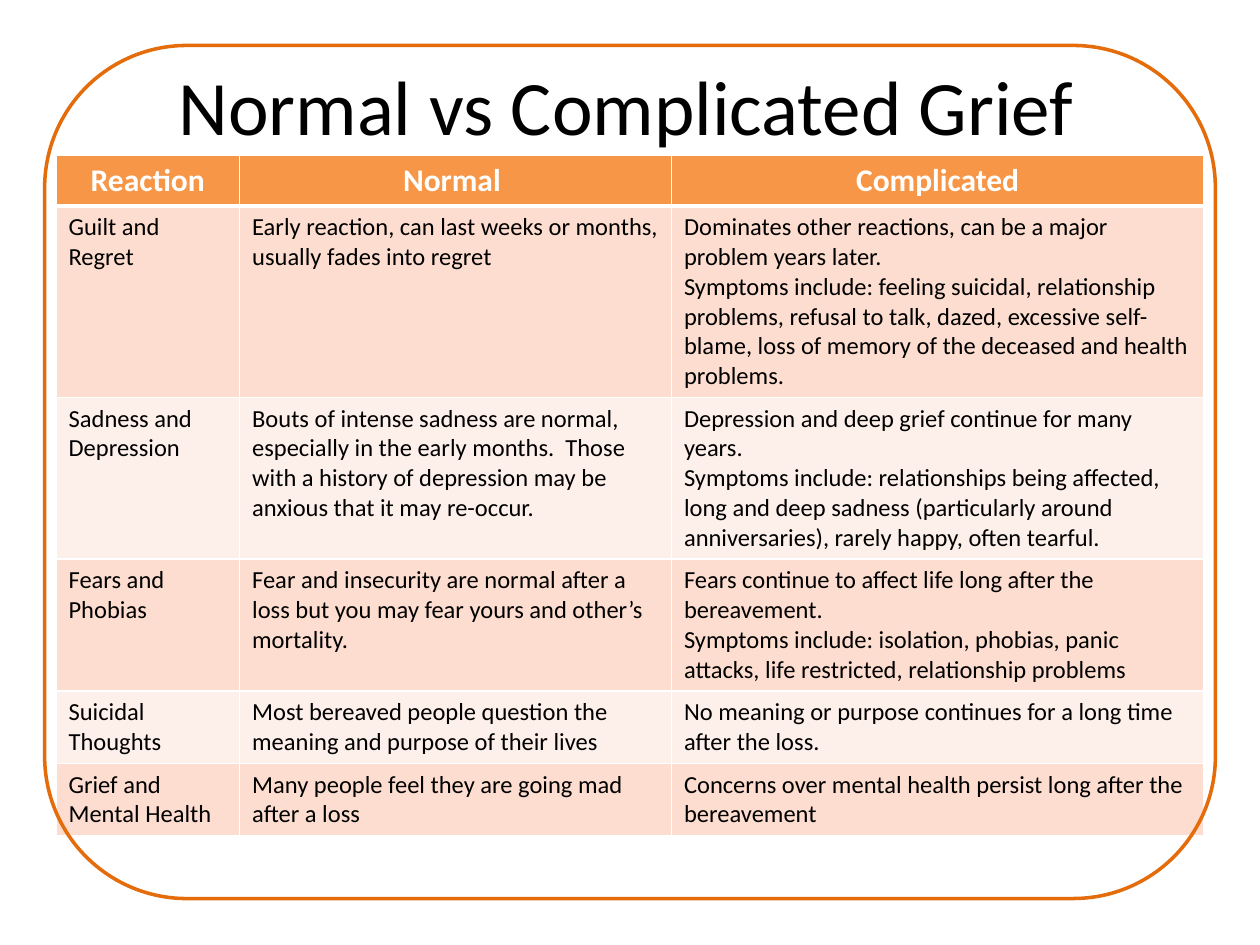
from lxml import etree
from pptx import Presentation
from pptx import util as u
from pptx.dml.color import RGBColor
from pptx.enum import shapes, text
from pptx.oxml import ns

FONT = "Calibri"
ORANGE, DARK, WHITE, BLACK = "F79646", "E46C0A", "FFFFFF", "000000"
BANDS = ["FCDDCF", "FDEFE9"]
HEADS = ["Reaction", "Normal ", "Complicated"]
ROWS = [
    ["Guilt and Regret",
     "Early reaction, can last weeks or months, usually fades into regret",
     "Dominates other reactions, can be a major problem years later.\n"
     "Symptoms include: feeling suicidal, relationship problems, refusal to talk, "
     "dazed, excessive self-blame, loss of memory of the deceased and health problems."],
    ["Sadness and Depression",
     "Bouts of intense sadness are normal, especially in the early months.  Those "
     "with a history of depression may be anxious that it may re-occur.",
     "Depression and deep grief continue for many years.\n"
     "Symptoms include: relationships being affected, long and deep sadness "
     "(particularly around anniversaries), rarely happy, often tearful."],
    ["Fears and Phobias",
     "Fear and insecurity are normal after a loss but you may fear yours and "
     "other’s mortality.",
     "Fears continue to affect life long after the bereavement.\n"
     "Symptoms include: isolation, phobias, panic attacks, life restricted, "
     "relationship problems"],
    ["Suicidal Thoughts",
     "Most bereaved people question the meaning and purpose of their lives",
     "No meaning or purpose continues for a long time after the loss."],
    ["Grief and Mental Health",
     "Many people feel they are going mad after a loss",
     "Concerns over mental health persist long after the bereavement"],
]


def color(code):
    return RGBColor.from_string(code)


def write(frame, words, size=14, ink=BLACK, bold=False, align=text.PP_ALIGN.LEFT):
    for i, line in enumerate(words.split("\n")):
        para = frame.add_paragraph() if i else frame.paragraphs[0]
        para.alignment = align
        run = para.add_run()
        run.text = line
        font = run.font
        font.name, font.size, font.bold = FONT, u.Pt(size), bold
        font.color.rgb = color(ink)


def edge(cell, side, width, ink=WHITE):
    line = etree.SubElement(cell._tc.get_or_add_tcPr(), ns.qn("a:ln" + side),
                            w=str(u.Pt(width)))
    fill = etree.SubElement(line, ns.qn("a:solidFill"))
    etree.SubElement(fill, ns.qn("a:srgbClr"), val=ink)


class Deck:
    def __init__(self):
        self.prs = Presentation()
        self.prs.slide_width, self.prs.slide_height = u.Pt(720), u.Pt(540)
        self.slide = self.prs.slides.add_slide(self.prs.slide_layouts[5])

    def title(self, words, *box):
        shape = self.slide.shapes.title
        shape.left, shape.top, shape.width, shape.height = map(u.Pt, box)
        shape.text_frame.vertical_anchor = text.MSO_ANCHOR.MIDDLE
        write(shape.text_frame, words, size=44, align=text.PP_ALIGN.CENTER)

    def table(self, heads, rows, left, top, widths, height):
        count = len(rows) + 1
        table = self.slide.shapes.add_table(
            count, len(widths), u.Pt(left), u.Pt(top),
            u.Pt(sum(widths)), u.Pt(height * count)).table
        for col, width in zip(table.columns, widths):
            col.width = u.Pt(width)
        for r, row in enumerate([heads] + rows):
            for c, words in enumerate(row):
                cell = table.cell(r, c)
                for side in "LRTB":
                    thick = (r, side) in [(0, "B"), (1, "T")]
                    edge(cell, side, 3 if thick else 1)
                cell.fill.solid()
                cell.fill.fore_color.rgb = color(BANDS[(r - 1) % 2] if r else ORANGE)
                if r:
                    write(cell.text_frame, words)
                else:
                    write(cell.text_frame, words, size=18, ink=WHITE, bold=True,
                          align=text.PP_ALIGN.CENTER)

    def frame(self, *box):
        shape = self.slide.shapes.add_shape(
            shapes.MSO_SHAPE.ROUNDED_RECTANGLE, *map(u.Pt, box))
        shape.shadow.inherit = False
        shape.fill.background()
        shape.line.color.rgb = color(DARK)
        shape.line.width = u.Pt(2)


def main():
    deck = Deck()
    # Heading
    deck.title("Normal vs Complicated Grief ", 39, 15, 648, 90)
    # Comparison of reactions; rows grow to fit their text
    deck.table(HEADS, ROWS, 32, 88.5, [104.9, 246.8, 304.3], 29.2)
    # Rounded border over everything
    deck.frame(25.5, 26, 669, 487.5)
    deck.prs.save("out.pptx")


if __name__ == "__main__":
    main()
